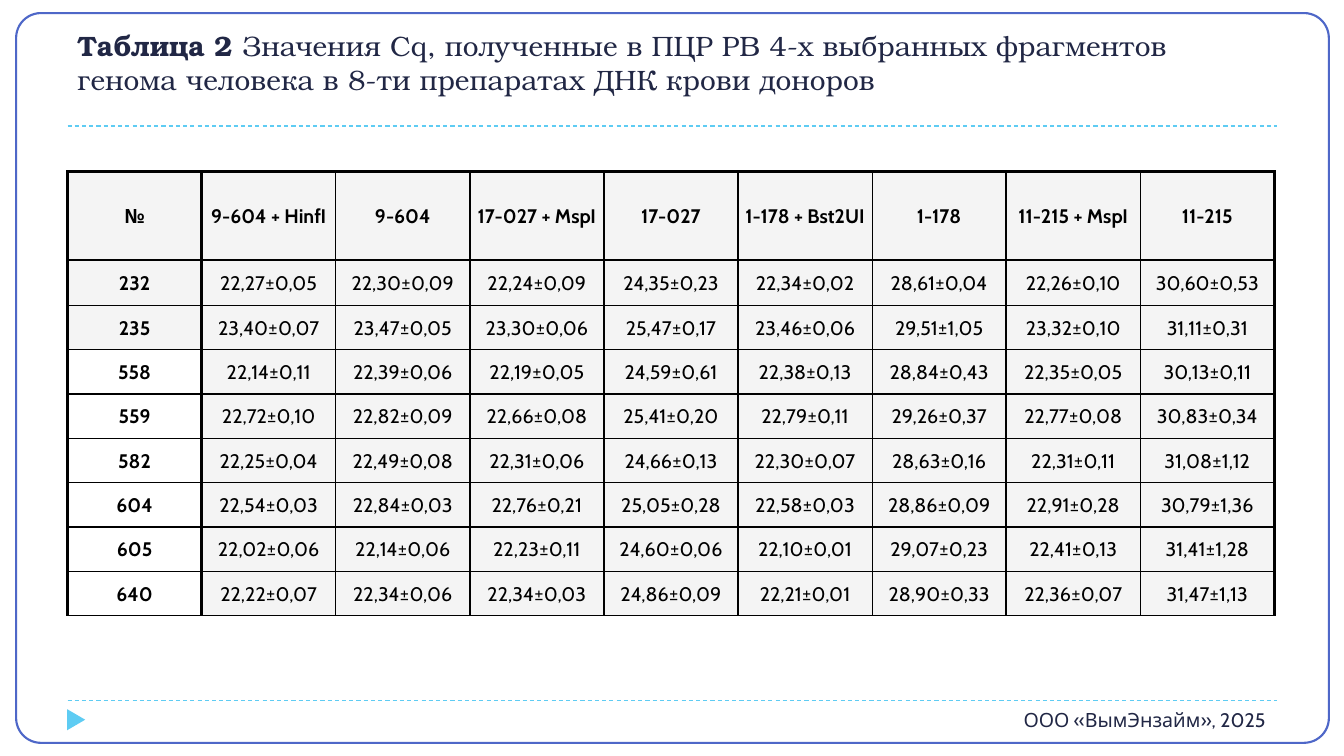
from dataclasses import dataclass
from typing import Any

from lxml.etree import SubElement
from pptx import Presentation
from pptx.dml.color import RGBColor
from pptx.enum.dml import MSO_LINE_DASH_STYLE as Dash
from pptx.enum.shapes import MSO_CONNECTOR_TYPE as Connector, MSO_SHAPE as Preset
from pptx.enum.text import MSO_VERTICAL_ANCHOR as Anchor, PP_PARAGRAPH_ALIGNMENT as Align
from pptx.oxml import parse_xml
from pptx.oxml.ns import nsdecls, qn
from pptx.util import Inches, Pt


@dataclass(frozen=True)
class Theme:
    frame: str = "4E67C8"
    accent: str = "5ECCF3"
    ink: str = "212745"
    table_ink: str = "000000"
    cell: str = "F4F4F4"
    title_font: str = "TeX Gyre Bonum"
    body_font: str = "Cabin"
    title_size: float = 20
    body_size: float = 14
    thin: float = 1
    thick: float = 2


@dataclass(frozen=True)
class Box:
    left: float
    top: float
    width: float
    height: float

    def lengths(self) -> tuple:
        return tuple(Inches(n) for n in (self.left, self.top, self.width, self.height))


@dataclass(frozen=True)
class TextRun:
    text: str
    font: str
    size: float
    color: str
    bold: bool = False


@dataclass(frozen=True)
class TextBlock:
    box: Box
    runs: tuple[TextRun, ...]
    align: Align
    anchor: Anchor


@dataclass(frozen=True)
class Ornament:
    preset: Preset
    box: Box
    adjustment: float
    fill: str | None = None
    line: str | None = None
    rotation: float = 0


THEME = Theme()
ORNAMENTS = (
    Ornament(Preset.ROUNDED_RECTANGLE, Box(0.16, 0.13, 13.02, 7.24), 0.034, line=THEME.frame),
    Ornament(Preset.ISOSCELES_TRIANGLE, Box(0.65, 7.05, 0.21, 0.18), 0.5, fill=THEME.accent, rotation=90),
)
RULE_LEFT, RULE_RIGHT = 0.67, 12.67
RULE_TOPS = (6.95, 1.25)

TITLE_STYLE = (THEME.title_font, THEME.title_size, THEME.ink)
TEXT_BLOCKS = (
    TextBlock(
        Box(0.67, 0.17, 12, 0.83),
        (
            TextRun("Таблица 2 ", *TITLE_STYLE, bold=True),
            TextRun("Значения Cq, полученные в ПЦР РВ 4-х выбранных фрагментов "
                    "генома человека в 8-ти препаратах ДНК крови доноров", *TITLE_STYLE),
        ),
        Align.LEFT, Anchor.BOTTOM,
    ),
    TextBlock(
        Box(7.54, 6.97, 5.11, 0.4),
        (TextRun("ООО «ВымЭнзайм», 2025", THEME.body_font, THEME.body_size, THEME.ink),),
        Align.RIGHT, Anchor.TOP,
    ),
)

TABLE_BOX = Box(0.67, 1.7, 11.97, 4.41)
COLUMN_WIDTH = 1.33
ROW_HEIGHTS = (0.88, 0.45) + (0.44,) * 7
SHADED_LABEL_ROWS = 3
CQ_HEADER = ("№", "9-604 + HinfI", "9-604", "17-027 + MspI", "17-027",
             "1-178 + Bst2UI", "1-178", "11-215 + MspI", "11-215")
CQ_VALUES = """
232 22,27±0,05 22,30±0,09 22,24±0,09 24,35±0,23 22,34±0,02 28,61±0,04 22,26±0,10 30,60±0,53
235 23,40±0,07 23,47±0,05 23,30±0,06 25,47±0,17 23,46±0,06 29,51±1,05 23,32±0,10 31,11±0,31
558 22,14±0,11 22,39±0,06 22,19±0,05 24,59±0,61 22,38±0,13 28,84±0,43 22,35±0,05 30,13±0,11
559 22,72±0,10 22,82±0,09 22,66±0,08 25,41±0,20 22,79±0,11 29,26±0,37 22,77±0,08 30,83±0,34
582 22,25±0,04 22,49±0,08 22,31±0,06 24,66±0,13 22,30±0,07 28,63±0,16 22,31±0,11 31,08±1,12
604 22,54±0,03 22,84±0,03 22,76±0,21 25,05±0,28 22,58±0,03 28,86±0,09 22,91±0,28 30,79±1,36
605 22,02±0,06 22,14±0,06 22,23±0,11 24,60±0,06 22,10±0,01 29,07±0,23 22,41±0,13 31,41±1,28
640 22,22±0,07 22,34±0,06 22,34±0,03 24,86±0,09 22,21±0,01 28,90±0,33 22,36±0,07 31,47±1,13
"""
CQ_ROWS = (CQ_HEADER, *(tuple(row.split()) for row in CQ_VALUES.strip().splitlines()))


def apply_format(target: Any, values: dict[str, Any]) -> None:
    for name, value in values.items():
        setattr(target, name, value)


def set_fill(fill: Any, color: str | None) -> None:
    if color is None:
        fill.background()
    else:
        fill.solid()
        fill.fore_color.rgb = RGBColor.from_string(color)


def add_run(paragraph: Any, text_run: TextRun) -> None:
    run = paragraph.add_run()
    run.text = text_run.text
    apply_format(run.font, {"name": text_run.font, "size": Pt(text_run.size), "bold": text_run.bold})
    run.font.color.rgb = RGBColor.from_string(text_run.color)


def add_ornament(slide: Any, ornament: Ornament) -> None:
    shape = slide.shapes.add_shape(ornament.preset, *ornament.box.lengths())
    shape.shadow.inherit = False
    shape.rotation = ornament.rotation
    shape.adjustments[0] = ornament.adjustment
    set_fill(shape.fill, ornament.fill)
    set_fill(shape.line.fill, ornament.line)
    if ornament.line:
        shape.line.width = Pt(1.5)


def add_rule(slide: Any, top: float) -> None:
    rule = slide.shapes.add_connector(
        Connector.STRAIGHT, Inches(RULE_LEFT), Inches(top), Inches(RULE_RIGHT), Inches(top))
    set_fill(rule.line.fill, THEME.accent)
    apply_format(rule.line, {"width": Pt(0.75), "dash_style": Dash.DASH})
    SubElement(rule._element.spPr, qn("a:effectLst"))


def add_text(slide: Any, block: TextBlock) -> None:
    frame = slide.shapes.add_textbox(*block.box.lengths()).text_frame
    apply_format(frame, {"word_wrap": True, "vertical_anchor": block.anchor})
    paragraph = frame.paragraphs[0]
    paragraph.alignment = block.align
    for text_run in block.runs:
        add_run(paragraph, text_run)


def set_borders(cell: Any, row: int, column: int) -> None:
    """Thick edges enclose the header and each pair of columns; the rest are thin."""
    def vertical(edge: int) -> float:
        return THEME.thick if edge == 0 or edge % 2 else THEME.thin

    def horizontal(edge: int) -> float:
        return THEME.thick if edge < 2 else THEME.thin

    widths = {"L": vertical(column), "R": vertical(column + 1),
              "T": horizontal(row), "B": horizontal(row + 1)}
    properties = cell._tc.get_or_add_tcPr()
    for position, (side, width) in enumerate(widths.items()):
        properties.insert(position, parse_xml(
            f'<a:ln{side} {nsdecls("a")} w="{Pt(width)}"><a:solidFill>'
            f'<a:srgbClr val="{THEME.table_ink}"/></a:solidFill></a:ln{side}>'))


def add_cq_table(slide: Any) -> None:
    table = slide.shapes.add_table(len(CQ_ROWS), len(CQ_HEADER), *TABLE_BOX.lengths()).table
    apply_format(table, {"first_row": False, "horz_banding": False})
    for table_column in table.columns:
        table_column.width = Inches(COLUMN_WIDTH)
    margins = {"margin_left": 0.01, "margin_top": 0.01, "margin_right": 0.01, "margin_bottom": 0}
    cell_format = {name: Inches(value) for name, value in margins.items()}
    cell_format["vertical_anchor"] = Anchor.MIDDLE
    for row, texts in enumerate(CQ_ROWS):
        table.rows[row].height = Inches(ROW_HEIGHTS[row])
        for column, text in enumerate(texts):
            cell = table.cell(row, column)
            apply_format(cell, cell_format)
            set_fill(cell.fill, THEME.cell if column or row < SHADED_LABEL_ROWS else None)
            set_borders(cell, row, column)
            paragraph = cell.text_frame.paragraphs[0]
            paragraph.alignment = Align.CENTER
            add_run(paragraph, TextRun(text, THEME.body_font, THEME.body_size,
                                       THEME.table_ink, bold=row == 0 or column == 0))


def main() -> None:
    presentation = Presentation()
    apply_format(presentation, {"slide_width": Inches(13.33), "slide_height": Inches(7.5)})
    slide = presentation.slides.add_slide(presentation.slide_layouts[6])
    for ornament in ORNAMENTS:
        add_ornament(slide, ornament)
    for top in RULE_TOPS:
        add_rule(slide, top)
    for block in TEXT_BLOCKS:
        add_text(slide, block)
    add_cq_table(slide)
    presentation.save("out.pptx")


if __name__ == "__main__":
    main()
